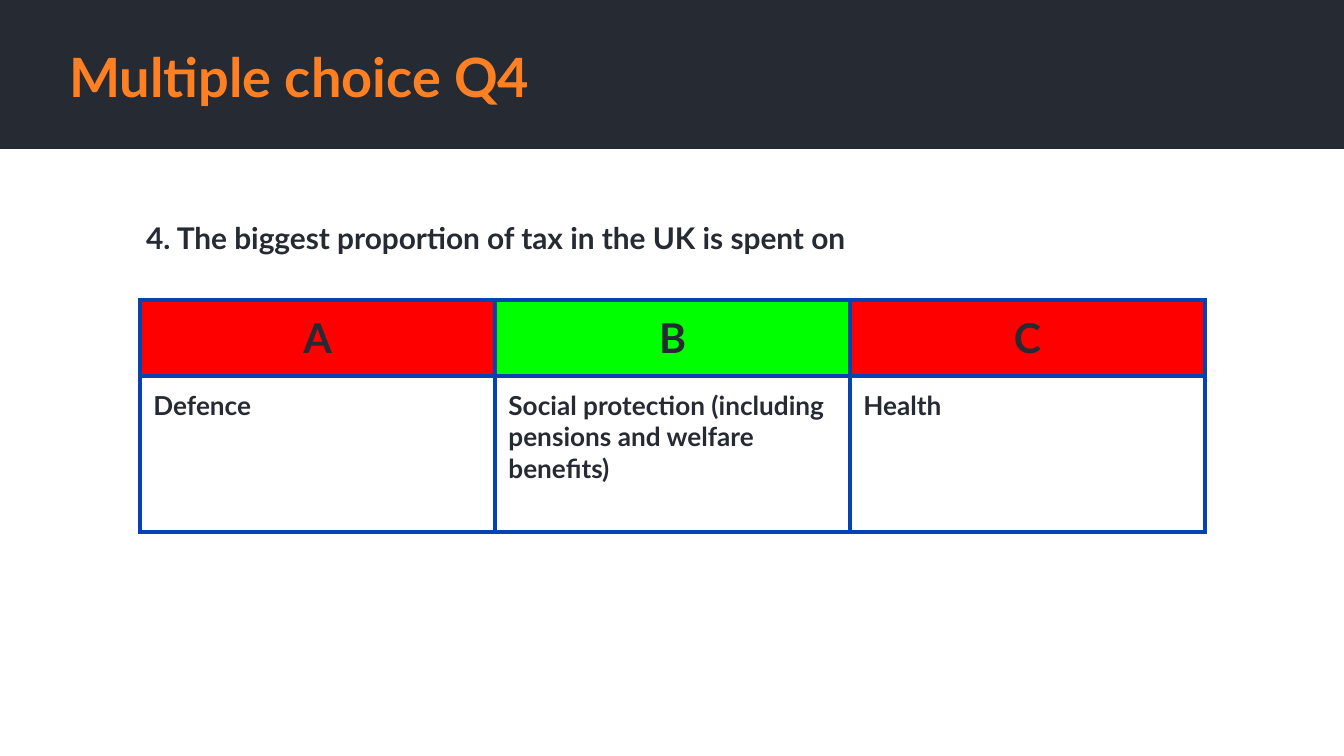
from lxml import etree
from pptx import Presentation
from pptx.dml.color import RGBColor
from pptx.enum.shapes import MSO_SHAPE as SHAPE
from pptx.enum.text import MSO_ANCHOR as ANCHOR, MSO_AUTO_SIZE as AUTO, PP_ALIGN as ALIGN
from pptx.oxml.ns import qn
from pptx.util import Emu, Pt

DARK, ORANGE, BLUE, RED, GREEN = "262A33", "FF8022", "0543B3", "FF0000", "00FF00"
INSET = 0.1
ANSWERS = [
    ("A", "Defence", RED),
    ("B", "Social protection (including pensions and welfare benefits)", GREEN),
    ("C", "Health", RED),
]


def px(n):
    """Turn whole pixels into EMU."""
    return Emu(round(n * 914400 / 134.4))


def color(value):
    """Turn a hex string into a colour."""
    return RGBColor.from_string(value)


def write(tf, text, size, fill=DARK, align=ALIGN.LEFT):
    """Write one bold paragraph into a text frame."""
    p = tf.paragraphs[0]
    p.alignment = align
    r = p.add_run()
    r.text = text
    for name, value in {"name": "Lato", "size": Pt(size), "bold": True}.items():
        setattr(r.font, name, value)
    r.font.color.rgb = color(fill)


def set_insets(target):
    """Give a text frame or a cell equal margins."""
    for side in ("left", "top", "right", "bottom"):
        setattr(target, f"margin_{side}", Pt(72 * INSET))


def add_band(s, box, fill):
    """Add a plain filled rectangle."""
    sp = s.shapes.add_shape(SHAPE.RECTANGLE, *map(px, box))
    sp.shadow.inherit = False
    sp.fill.solid()
    sp.fill.fore_color.rgb = color(fill)
    sp.line.fill.background()


def add_text(s, box, text, size, fill=DARK, **frame):
    """Add a wrapped text box with one paragraph."""
    tf = s.shapes.add_textbox(*map(px, box)).text_frame
    for name, value in {"word_wrap": True, **frame}.items():
        setattr(tf, name, value)
    set_insets(tf)
    write(tf, text, size, fill)


def set_borders(cell, line, width):
    """Draw the four sides of a cell, ahead of its fill."""
    tc_pr = cell._tc.get_or_add_tcPr()
    for i, side in enumerate(("lnL", "lnR", "lnT", "lnB")):
        ln = etree.Element(qn(f"a:{side}"), w=str(Pt(width)))
        fill = etree.SubElement(ln, qn("a:solidFill"))
        etree.SubElement(fill, qn("a:srgbClr"), val=line)
        tc_pr.insert(i, ln)


def fill_cell(cell, text, size, align, fill=None):
    """Set the text, fill and borders of one cell."""
    set_insets(cell)
    write(cell.text_frame, text, size, align=align)
    if fill:
        cell.fill.solid()
        cell.fill.fore_color.rgb = color(fill)
    else:
        cell.fill.background()
    set_borders(cell, BLUE, 2.25)


def add_answers(s, left, top, col_width, row_heights):
    """Add the table of lettered answers."""
    box = (left, top, col_width * len(ANSWERS), sum(row_heights))
    table = s.shapes.add_table(2, len(ANSWERS), *map(px, box)).table
    for row, height in zip(table.rows, row_heights):
        row.height = px(height)
    for i, (letter, answer, fill) in enumerate(ANSWERS):
        table.columns[i].width = px(col_width)
        fill_cell(table.cell(0, i), letter, 22, ALIGN.CENTER, fill)
        fill_cell(table.cell(1, i), answer, 14, ALIGN.LEFT)


def main():
    """Build the quiz slide."""
    prs = Presentation()
    prs.slide_width, prs.slide_height = px(1344), px(756)
    s = prs.slides.add_slide(prs.slide_layouts[6])
    add_band(s, (0, 0, 1344, 149), DARK)
    add_text(s, (56, 38, 1174, 75), "Multiple choice Q4", 29, ORANGE,
             vertical_anchor=ANCHOR.MIDDLE)
    add_answers(s, 140, 300, 355, (76, 156))
    add_text(s, (133, 206, 1126, 113),
             "4. The biggest proportion of tax in the UK is spent on", 16,
             auto_size=AUTO.SHAPE_TO_FIT_TEXT)
    prs.save("out.pptx")


if __name__ == "__main__":
    main()
